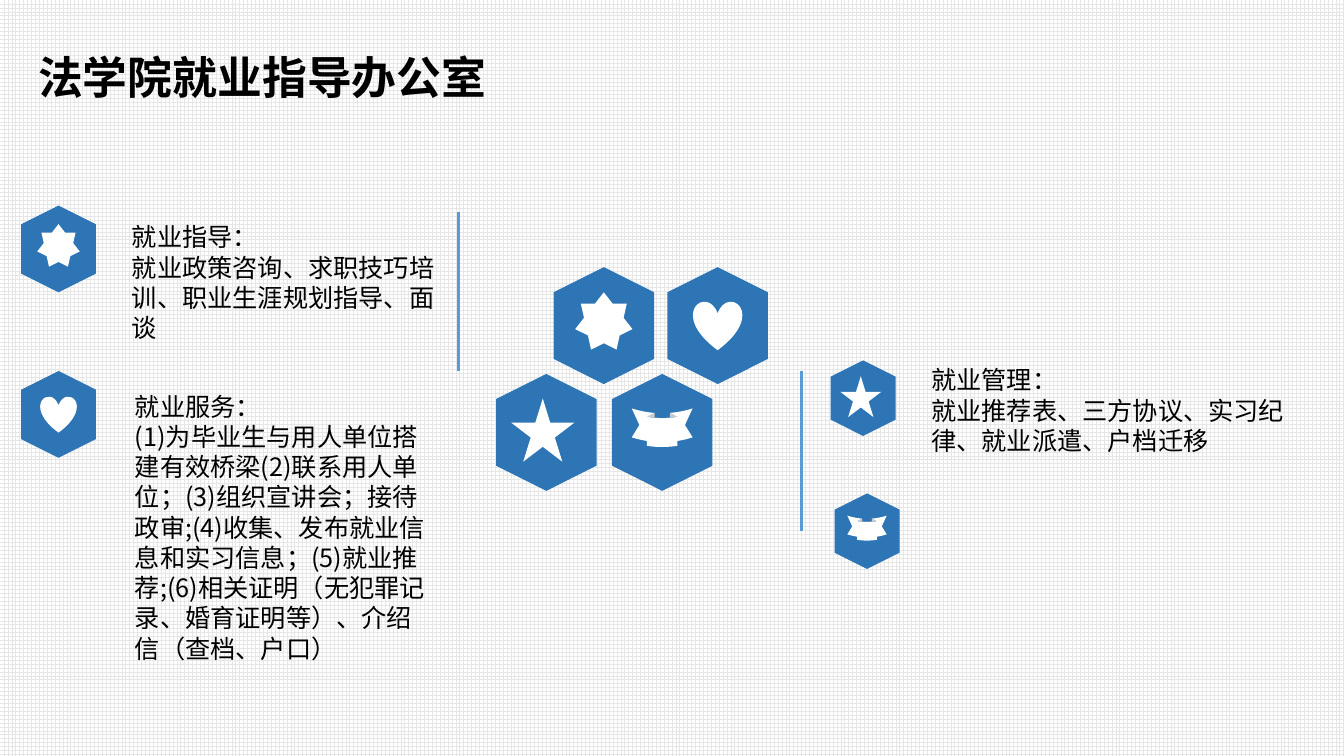
from dataclasses import dataclass

from lxml.etree import SubElement
from pptx import Presentation
from pptx.dml.color import RGBColor
from pptx.enum.dml import MSO_PATTERN
from pptx.enum.shapes import MSO_CONNECTOR, MSO_SHAPE
from pptx.enum.text import MSO_AUTO_SIZE
from pptx.oxml.ns import qn
from pptx.util import Pt

FONT = "Noto Sans CJK SC"
BLUE, LIGHT_BLUE, WHITE, BLACK, GREY = "2E75B6", "5B9BD5", "FFFFFF", "000000", "E7E6E6"


@dataclass(frozen=True)
class Icon:
    kind: MSO_SHAPE
    width: float
    height: float
    dx: float = 0
    dy: float = 0


@dataclass(frozen=True)
class Badge:
    icon: Icon
    cx: float
    cy: float
    size: float


@dataclass(frozen=True)
class Label:
    left: float
    top: float
    width: float
    height: float
    paragraphs: tuple[str, ...]
    size: float = 18
    bold: bool = False


@dataclass(frozen=True)
class Divider:
    x: float
    top: float
    bottom: float


STAR7 = Icon(MSO_SHAPE.STAR_7_POINT, 0.49, 0.49, dy=-0.04)
HEART = Icon(MSO_SHAPE.HEART, 0.42, 0.42)
STAR5 = Icon(MSO_SHAPE.STAR_5_POINT, 0.54, 0.54, -0.03, -0.02)
RIBBON = Icon(MSO_SHAPE.CURVED_DOWN_RIBBON, 0.52, 0.33, dy=-0.04)

BADGES = [
    Badge(STAR7, 431.3, 232.6, 83.5),
    Badge(HEART, 512.6, 232.6, 83.5),
    Badge(STAR5, 390.2, 308.9, 83.5),
    Badge(RIBBON, 473, 308.9, 83.5),
    Badge(STAR7, 41.8, 177.8, 62),
    Badge(HEART, 41.8, 296, 62),
    Badge(STAR5, 616.5, 284.4, 54),
    Badge(RIBBON, 619.3, 379.4, 54),
]
DIVIDERS = [Divider(327.6, 151.2, 265.3), Divider(572.4, 265.3, 379.4)]
LABELS = [
    Label(20.2, 31.7, 357, 46, ("法学院就业指导办公室",), 32, True),
    Label(87.1, 154.8, 230.4, 94.3, (
        "就业指导：",
        "就业政策咨询、求职技巧培训、职业生涯规划指导、面谈",
    )),
    Label(89.3, 275.8, 227.5, 203.8, (
        "就业服务：",
        "(1)为毕业生与用人单位搭建有效桥梁(2)联系用人单位；(3)组织宣讲会；接待政审;"
        "(4)收集、发布就业信息和实习信息；(5)就业推荐;"
        "(6)相关证明（无犯罪记录、婚育证明等）、介绍信（查档、户口）",
    )),
    Label(658.1, 257, 270, 72.7, (
        "就业管理：",
        "就业推荐表、三方协议、实习纪律、就业派遣、户档迁移",
    )),
]


def rgb(value: str) -> RGBColor:
    return RGBColor.from_string(value)


def add_centred(s, kind: MSO_SHAPE, cx: float, cy: float, w: float, h: float, color: str):
    sp = s.shapes.add_shape(kind, Pt(cx - w / 2), Pt(cy - h / 2), Pt(w), Pt(h))
    sp.shadow.inherit = False
    sp.fill.solid()
    sp.fill.fore_color.rgb = rgb(color)
    sp.line.fill.background()
    return sp


def add_badge(s, badge: Badge) -> None:
    size, icon = badge.size, badge.icon
    hexagon = add_centred(s, MSO_SHAPE.HEXAGON, badge.cx, badge.cy, size, size * 0.86, BLUE)
    hexagon.rotation = 90
    add_centred(s, icon.kind, badge.cx + icon.dx * size, badge.cy + icon.dy * size,
                icon.width * size, icon.height * size, WHITE)


def add_divider(s, divider: Divider) -> None:
    x = Pt(divider.x)
    line = s.shapes.add_connector(MSO_CONNECTOR.STRAIGHT, x, Pt(divider.top), x, Pt(divider.bottom))
    line.line.color.rgb = rgb(LIGHT_BLUE)
    line.line.width = Pt(2.25)
    SubElement(line._element.spPr, qn("a:effectLst"))


def add_label(s, label: Label) -> None:
    sp = s.shapes.add_textbox(Pt(label.left), Pt(label.top), Pt(label.width), Pt(label.height))
    tf = sp.text_frame
    tf.word_wrap = True
    tf.auto_size = MSO_AUTO_SIZE.SHAPE_TO_FIT_TEXT
    tf.text = "\n".join(label.paragraphs)
    for p in tf.paragraphs:
        p.line_spacing = Pt(label.size * 1.2)
        for r in p.runs:
            r.font.name = FONT
            r.font.size = Pt(label.size)
            r.font.bold = label.bold
            r.font.color.rgb = rgb(BLACK)
            SubElement(r._r.rPr, qn("a:ea")).set("typeface", FONT)


def main() -> None:
    prs = Presentation()
    prs.slide_width, prs.slide_height = Pt(960), Pt(540)
    s = prs.slides.add_slide(prs.slide_layouts[6])
    fill = s.background.fill
    fill.patterned()
    fill.pattern = MSO_PATTERN.LARGE_GRID
    fill.fore_color.rgb = rgb(GREY)
    fill.back_color.rgb = rgb(WHITE)
    for badge in BADGES:
        add_badge(s, badge)
    for divider in DIVIDERS:
        add_divider(s, divider)
    for label in LABELS:
        add_label(s, label)
    prs.save("out.pptx")


if __name__ == "__main__":
    main()
